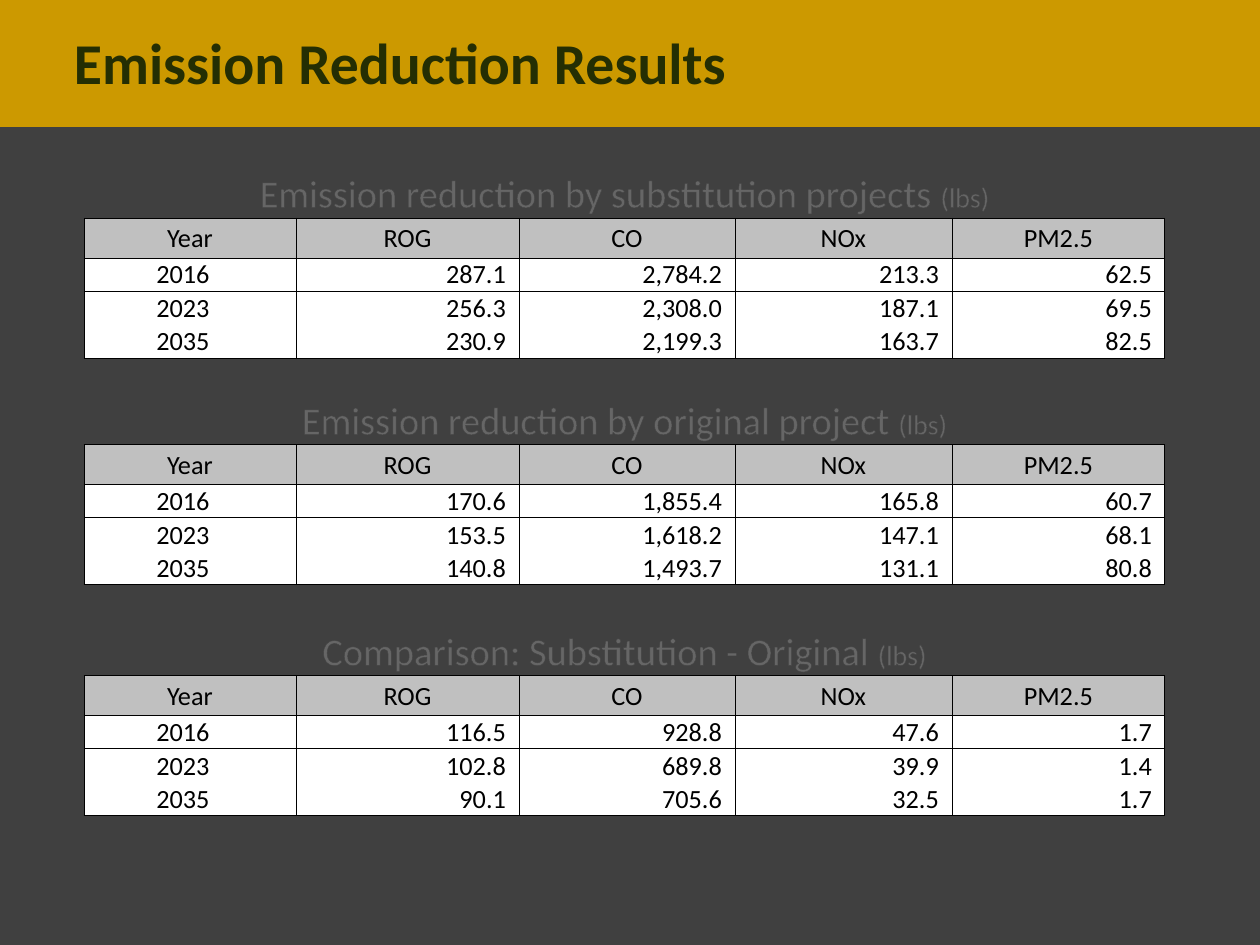
from lxml.etree import SubElement
from pptx import Presentation
from pptx.dml.color import RGBColor
from pptx.enum.shapes import MSO_SHAPE
from pptx.enum.text import MSO_ANCHOR, PP_ALIGN
from pptx.oxml import parse_xml
from pptx.oxml.ns import nsdecls, qn
from pptx.util import Pt

PX = 914400 // 126
FONT = "Calibri"
DARK = RGBColor(0x40, 0x40, 0x40)
GOLD = RGBColor(0xCC, 0x99, 0x00)
OLIVE = RGBColor(0x24, 0x2E, 0x03)
CREAM = RGBColor(0xFF, 0xCC, 0x66)
GREY = RGBColor(0x59, 0x59, 0x59)
SILVER = RGBColor(0xC0, 0xC0, 0xC0)
WHITE = RGBColor(0xFF, 0xFF, 0xFF)
BLACK = RGBColor(0x00, 0x00, 0x00)
PLAIN = "{2D5ABB26-0587-4C30-8999-92F81FD0307C}"

COLS = [212, 223, 216, 217, 213]
HEAD = ["Year", "ROG", "CO", "NOx", "PM2.5"]
GAPS = [0, 39, 43]
HIGH = [48, 40, 33, 34, 33]
PARTS = [
    ("Emission reduction by substitution projects ", [
        ["2016", "287.1", "2,784.2", "213.3", "62.5"],
        ["2023", "256.3", "2,308.0", "187.1", "69.5"],
        ["2035", "230.9", "2,199.3", "163.7", "82.5"]]),
    ("Emission reduction by original project ", [
        ["2016", "170.6", "1,855.4", "165.8", "60.7"],
        ["2023", "153.5", "1,618.2", "147.1", "68.1"],
        ["2035", "140.8", "1,493.7", "131.1", "80.8"]]),
    ("Comparison: Substitution - Original ", [
        ["2016", "116.5", "928.8", "47.6", "1.7"],
        ["2023", "102.8", "689.8", "39.9", "1.4"],
        ["2035", "90.1", "705.6", "32.5", "1.7"]]),
]


def add_run(para, text, size, color, edge=None, bold=False):
    """Add one run, with a faint outline if an edge colour is given."""
    run = para.add_run()
    run.text = text
    font = run.font
    font.name, font.size, font.bold = FONT, Pt(size), bold
    font.color.rgb = color
    if edge is not None:
        line = parse_xml(f'<a:ln {nsdecls("a")} w="9525"/>')
        fill = SubElement(line, qn("a:solidFill"))
        tint = SubElement(fill, qn("a:srgbClr"), val=str(edge))
        SubElement(tint, qn("a:alpha"), val="20000")
        SubElement(line, qn("a:prstDash"), val="solid")
        font._element.insert(0, line)


def set_box(box, left, top, right, low):
    """Set the four insets of a cell or text frame."""
    box.margin_left, box.margin_top = left * PX, top * PX
    box.margin_right, box.margin_bottom = right * PX, low * PX


def add_edges(cell, sides):
    """Draw thin black borders on the sides named in drawing order."""
    props = cell._tc.get_or_add_tcPr()
    for spot, side in enumerate(sides):
        props.insert(spot, parse_xml(
            f'<a:ln{side} {nsdecls("a")} w="6350"><a:solidFill>'
            f'<a:srgbClr val="{BLACK}"/></a:solidFill></a:ln{side}>'))


def fill_cell(cell, text, color, sides, align, anchor, pads):
    """Fill a cell with text, colour and borders."""
    cell.fill.solid()
    cell.fill.fore_color.rgb = color
    cell.vertical_anchor = anchor
    set_box(cell, *pads)
    para = cell.text_frame.paragraphs[0]
    para.alignment = align
    add_run(para, text, 15, BLACK)
    add_edges(cell, sides)


def add_part(table, top, title, rows):
    """Fill the caption, head and data rows of one part."""
    for col in range(len(COLS)):
        add_edges(table.cell(top, col), "B")
    lead = table.cell(top, 0)
    lead.merge(table.cell(top, len(COLS) - 1))
    lead.vertical_anchor = MSO_ANCHOR.MIDDLE
    set_box(lead, 1, 1, 1, 0)
    para = lead.text_frame.paragraphs[0]
    para.alignment = PP_ALIGN.CENTER
    add_run(para, title, 22, WHITE, GREY)
    add_run(para, "(lbs)", 16, WHITE, GREY)
    for col, name in enumerate(HEAD):
        fill_cell(table.cell(top + 1, col), name, SILVER, "LRTB",
                  PP_ALIGN.CENTER, MSO_ANCHOR.MIDDLE, (1, 1, 1, 0))
    for row, items in enumerate(rows):
        sides = ["LRT", "LR", "LRB"][row]
        for col, item in enumerate(items):
            align = PP_ALIGN.RIGHT if col else PP_ALIGN.CENTER
            pads = (13, 1, 13, 0) if col else (1, 1, 15, 0)
            fill_cell(table.cell(top + 2 + row, col), item, WHITE, sides,
                      align, MSO_ANCHOR.BOTTOM, pads)


def add_grid(slide):
    """Add the table with its three parts."""
    highs = []
    for gap in GAPS:
        highs += [gap] * bool(gap) + HIGH
    frame = slide.shapes.add_table(len(highs), len(COLS), 84 * PX, 170 * PX,
                                   sum(COLS) * PX, sum(highs) * PX)
    table = frame.table
    table.first_row = table.horz_banding = False
    table._tbl.tblPr.find(qn("a:tableStyleId")).text = PLAIN
    for col, wide in zip(table.columns, COLS):
        col.width = wide * PX
    for row, high in zip(table.rows, highs):
        row.height = high * PX
        for cell in row.cells:
            cell.fill.background()
            set_box(cell, 0, 0, 0, 0)
    for num, (title, rows) in enumerate(PARTS):
        add_part(table, num * (len(HIGH) + 1), title, rows)


def add_band(slide):
    """Add the gold band across the top."""
    band = slide.shapes.add_shape(MSO_SHAPE.RECTANGLE, 0, 0, 1260 * PX, 126 * PX)
    band.shadow.inherit = False
    band.fill.solid()
    band.fill.fore_color.rgb = band.line.color.rgb = GOLD
    band.line.width = Pt(0.75)


def add_title(slide):
    """Add the slide title."""
    box = slide.shapes.add_textbox(63 * PX, 22 * PX, 1197 * PX, 94 * PX)
    frame = box.text_frame
    frame.word_wrap = True
    set_box(frame, 11, 5, 11, 5)
    add_run(frame.paragraphs[0], "Emission Reduction Results", 33, OLIVE, CREAM, True)


def main():
    """Build and save the slide."""
    deck = Presentation()
    deck.slide_width, deck.slide_height = 1260 * PX, 945 * PX
    slide = deck.slides.add_slide(deck.slide_layouts[6])
    back = slide.background.fill
    back.solid()
    back.fore_color.rgb = DARK
    add_band(slide)
    add_title(slide)
    add_grid(slide)
    deck.save("out.pptx")


if __name__ == "__main__":
    main()
